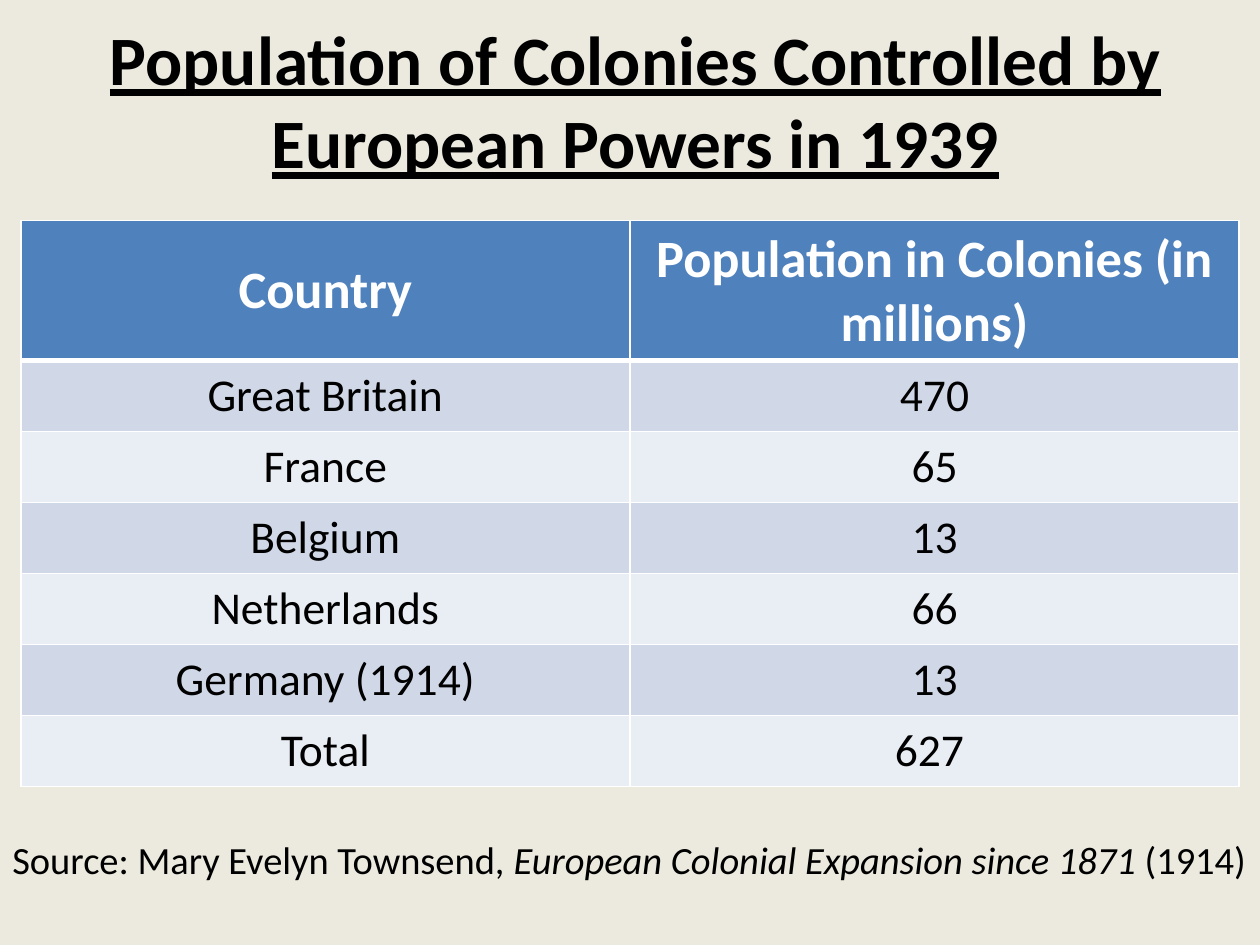
from lxml import etree
from pptx import Presentation
from pptx.dml.color import RGBColor
from pptx.enum.text import MSO_ANCHOR, PP_ALIGN
from pptx.oxml.ns import qn
from pptx.util import Cm, Pt

CENTER, LEFT = PP_ALIGN.CENTER, PP_ALIGN.LEFT
MIDDLE, TOP = MSO_ANCHOR.MIDDLE, MSO_ANCHOR.TOP

BLACK = RGBColor(0x00, 0x00, 0x00)
WHITE = RGBColor(0xFF, 0xFF, 0xFF)
BACKGROUND = RGBColor(0xEC, 0xEA, 0xDF)
HEADER_BLUE = RGBColor(0x4F, 0x81, 0xBD)
BANDS = (RGBColor(0xD0, 0xD8, 0xE8), RGBColor(0xE9, 0xED, 0xF4))
FONT = "Calibri"

ROWS = [
    ("Country", "Population in Colonies (in millions)"),
    ("Great Britain", "470"),
    ("France", "65"),
    ("Belgium", "13"),
    ("Netherlands", "66"),
    ("Germany (1914)", "13"),
    ("Total", "627 "),
]


def style(p, size, color=BLACK, bold=False, align=LEFT):
    p.alignment = align
    p.font.name = FONT
    p.font.size = Pt(size)
    p.font.bold = bold
    p.font.color.rgb = color


def add_text(slide, left, top, width, height, anchor):
    tf = slide.shapes.add_textbox(Cm(left), Cm(top), Cm(width), Cm(height)).text_frame
    tf.word_wrap = True
    tf.vertical_anchor = anchor
    return tf.paragraphs[0]


def set_borders(cell, top, bottom):
    tc_pr = cell._tc.get_or_add_tcPr()
    for side, width in (("L", 1), ("R", 1), ("T", top), ("B", bottom)):
        ln = etree.SubElement(tc_pr, qn(f"a:ln{side}"), w=str(Pt(width)))
        fill = etree.SubElement(ln, qn("a:solidFill"))
        etree.SubElement(fill, qn("a:srgbClr"), val=str(WHITE))


def fill_cell(cell, text, row):
    header = row == 0
    # A thick rule separates the header from the body
    set_borders(cell, top=3 if row == 1 else 1, bottom=3 if header else 1)
    cell.fill.solid()
    cell.fill.fore_color.rgb = HEADER_BLUE if header else BANDS[(row - 1) % 2]
    cell.vertical_anchor = MIDDLE
    cell.text = text
    p = cell.text_frame.paragraphs[0]
    if header:
        style(p, 30, WHITE, True, CENTER)
    else:
        style(p, 26, align=CENTER)


def add_population_table(slide):
    table = slide.shapes.add_table(
        len(ROWS), 2, Cm(0.42), Cm(4.45), Cm(24.56), Cm(11.17)).table
    for column in table.columns:
        column.width = Cm(12.28)
    for i, values in enumerate(ROWS):
        table.rows[i].height = Cm(2.82 if i == 0 else 1.43)
        for j, text in enumerate(values):
            fill_cell(table.cell(i, j), text, i)


def main():
    prs = Presentation()
    prs.slide_width, prs.slide_height = Cm(25.4), Cm(19.05)
    slide = prs.slides.add_slide(prs.slide_layouts[6])
    slide.background.fill.solid()
    slide.background.fill.fore_color.rgb = BACKGROUND

    # Title
    p = add_text(slide, 0.64, 0.42, 24.34, 3.18, MIDDLE)
    p.text = "Population of Colonies Controlled by European Powers in 1939"
    style(p, 39.6, bold=True, align=CENTER)
    p.font.underline = True

    # Table
    add_population_table(slide)

    # Source line
    p = add_text(slide, 0, 16.72, 25.4, 1.2, TOP)
    style(p, 22)
    for text, italic in (
        ("Source: Mary Evelyn Townsend, ", False),
        ("European Colonial Expansion since 1871 ", True),
        ("(1914)", False),
    ):
        r = p.add_run()
        r.text = text
        r.font.italic = italic

    prs.save("out.pptx")


if __name__ == "__main__":
    main()
